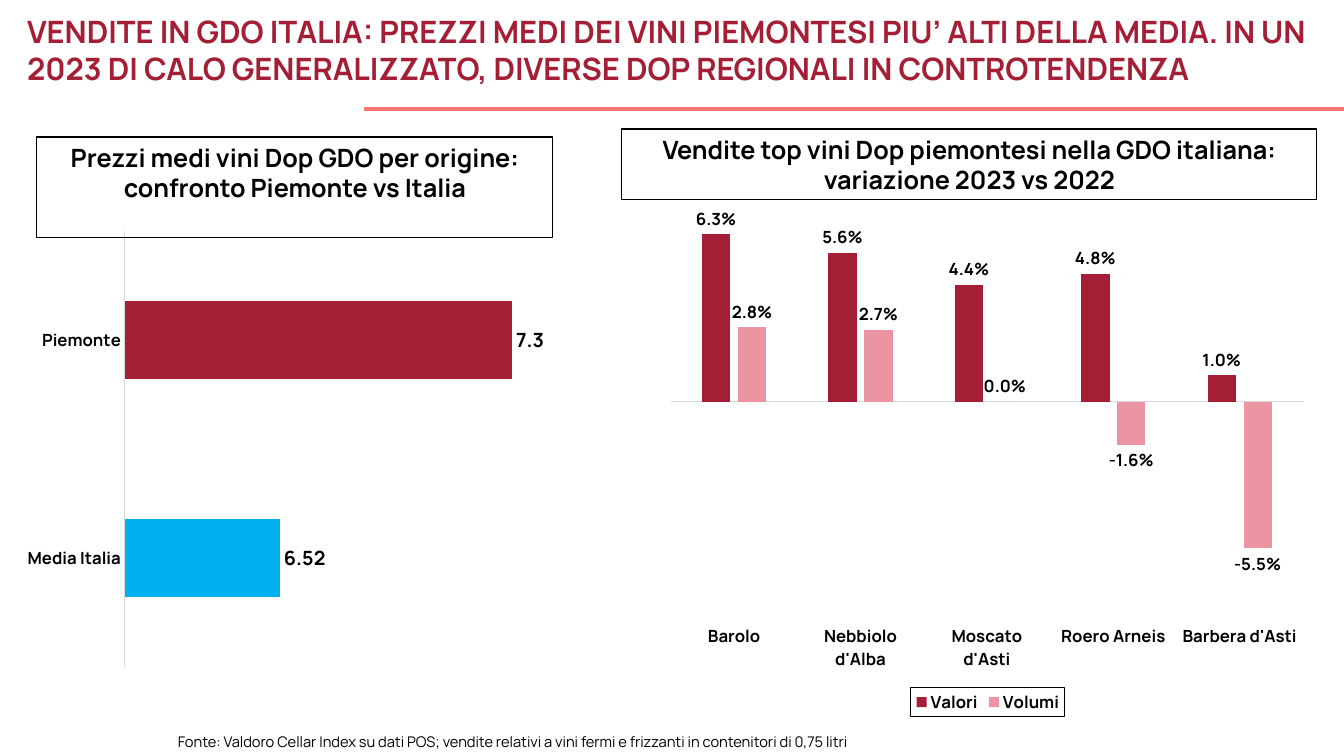
from lxml import etree
from pptx import Presentation
from pptx.chart.data import CategoryChartData
from pptx.dml.color import RGBColor
from pptx.enum.chart import (XL_CHART_TYPE, XL_LABEL_POSITION, XL_LEGEND_POSITION,
                             XL_TICK_LABEL_POSITION, XL_TICK_MARK)
from pptx.enum.shapes import MSO_CONNECTOR, MSO_SHAPE
from pptx.enum.text import MSO_ANCHOR, PP_ALIGN
from pptx.oxml import parse_xml
from pptx.oxml.ns import nsdecls, qn
from pptx.util import Emu, Pt

COLUMNS, BARS = XL_CHART_TYPE.COLUMN_CLUSTERED, XL_CHART_TYPE.BAR_CLUSTERED
LOW, NEXT_TO_AXIS = XL_TICK_LABEL_POSITION.LOW, XL_TICK_LABEL_POSITION.NEXT_TO_AXIS
OUTSIDE = XL_LABEL_POSITION.OUTSIDE_END
NO_TICK, BOTTOM = XL_TICK_MARK.NONE, XL_LEGEND_POSITION.BOTTOM
RECTANGLE, STRAIGHT = MSO_SHAPE.RECTANGLE, MSO_CONNECTOR.STRAIGHT
LEFT, CENTER, TOP = PP_ALIGN.LEFT, PP_ALIGN.CENTER, MSO_ANCHOR.TOP

WINE = RGBColor(0xA4, 0x1F, 0x35)
PINK = RGBColor(0xEB, 0x95, 0xA3)
CORAL = RGBColor(0xF8, 0x75, 0x75)
SKY = RGBColor(0x00, 0xB0, 0xF0)
GREY = RGBColor(0xD9, 0xD9, 0xD9)
BLACK = RGBColor(0, 0, 0)
FONT = "Manrope"
EMU_PER_PX = 914400 / 100.8
TITLE_ONLY = 5

SLIDE_SIZE = (1344, 756)
TITLE = ("VENDITE IN GDO ITALIA: PREZZI MEDI DEI VINI PIEMONTESI PIU’ ALTI DELLA MEDIA. "
         "IN UN 2023 DI CALO GENERALIZZATO, DIVERSE DOP REGIONALI IN CONTROTENDENZA")
TITLE_BOX = (17, 8, 1327, 121)
RULE = (364, 109, 1344, 109)
SOURCE = ("Fonte: Valdoro Cellar Index su dati POS; vendite relativi a vini fermi e "
          "frizzanti in contenitori di 0,75 litri")
SOURCE_BOX = (168, 728, 794, 27)
SALES = {
    "kind": COLUMNS, "box": (657, 177, 658, 543), "plot": (671, 189, 632, 426),
    "categories": ["Barolo", "Nebbiolo d'Alba", "Moscato d'Asti", "Roero Arneis",
                   "Barbera d'Asti"],
    "series": [("Valori", [0.063, 0.056, 0.044, 0.048, 0.01], WINE),
               ("Volumi", [0.028, 0.027, 0, -0.016, -0.055], PINK)],
    "range": (-0.08, 0.08), "gap": 219, "overlap": -27, "names_at": LOW,
    "number_format": "0.0%", "label_size": 12, "legend": (911, 691, 154, 32),
    "heading": "Vendite top vini Dop piemontesi nella GDO italiana: variazione 2023 vs 2022",
    "heading_box": (622, 129, 695, 71),
}
PRICES = {
    "kind": BARS, "box": (17, 222, 535, 455), "plot": (125, 231, 417, 436),
    "categories": ["Piemonte", "Media Italia"],
    "series": [("Prezzo medio", [7.3, 6.52], WINE)],
    "highlight": (1, SKY), "range": (6, 7.4), "gap": 182, "overlap": 0,
    "names_at": NEXT_TO_AXIS, "number_format": "General", "label_size": 14,
    "heading": "Prezzi medi vini Dop GDO per origine: confronto Piemonte vs Italia",
    "heading_box": (37, 137, 516, 101),
}


def px(lengths):
    return [Emu(round(length * EMU_PER_PX)) for length in lengths]


def set_font(font, size, color=BLACK, bold=True):
    for name, value in {"name": FONT, "size": Pt(size), "bold": bold}.items():
        setattr(font, name, value)
    font.color.rgb = color


def write(box, text, size, align=LEFT, color=BLACK, bold=True, wrap=True):
    frame = box.text_frame
    frame.word_wrap = wrap
    frame.vertical_anchor = TOP
    para = frame.paragraphs[0]
    para.alignment = align
    para.line_spacing = 1.0
    span = para.add_run()
    span.text = text
    set_font(span.font, size, color, bold)


def manual_layout(part, chart_box, inner=False):
    """Return a c:layout that places part, in slide px, within the chart."""
    left, top, width, height = chart_box
    shares = {"x": (part[0] - left) / width, "y": (part[1] - top) / height,
              "w": part[2] / width, "h": part[3] / height}
    modes = {"layoutTarget": "inner"} if inner else {}
    modes.update({"xMode": "edge", "yMode": "edge"})
    layout = etree.Element(qn("c:layout"))
    manual = etree.SubElement(layout, qn("c:manualLayout"))
    for name, value in {**modes, **shares}.items():
        etree.SubElement(manual, qn("c:" + name)).set("val", str(value))
    return layout


def drop_layout(parent):
    for old in parent.findall(qn("c:layout")):
        parent.remove(old)


def add_legend(chart, facts):
    chart.has_legend = True
    legend = chart.legend
    legend.position = BOTTOM
    legend.include_in_layout = False
    set_font(legend.font, 12)
    node = legend._element
    drop_layout(node)
    node.find(qn("c:legendPos")).addnext(manual_layout(facts["legend"], facts["box"]))
    node.find(qn("c:txPr")).addprevious(parse_xml(
        f'<c:spPr {nsdecls("c", "a")}><a:ln w="9525"><a:solidFill>'
        f'<a:srgbClr val="{BLACK}"/></a:solidFill></a:ln></c:spPr>'))


def add_bar_chart(page, facts):
    data = CategoryChartData()
    data.categories = facts["categories"]
    for name, values, _ in facts["series"]:
        data.add_series(name, values)
    chart = page.shapes.add_chart(facts["kind"], *px(facts["box"]), data).chart
    chart.has_title = False
    chart.has_legend = False
    chart.font.name, chart.font.size = "Arial", Pt(10)

    values_axis = chart.value_axis
    values_axis.minimum_scale, values_axis.maximum_scale = facts["range"]
    values_axis.has_major_gridlines = False
    values_axis.visible = False
    names_axis = chart.category_axis
    names_axis.major_tick_mark = names_axis.minor_tick_mark = NO_TICK
    names_axis.tick_label_position = facts["names_at"]
    names_axis.reverse_order = facts["kind"] == BARS
    names_axis.format.line.color.rgb = GREY
    names_axis.format.line.width = Pt(0.75)
    set_font(names_axis.tick_labels.font, 12)

    plot = chart.plots[0]
    plot.gap_width, plot.overlap = facts["gap"], facts["overlap"]
    plot.vary_by_categories = False
    for series, (_, _, color) in zip(plot.series, facts["series"]):
        series.invert_if_negative = False
        series.format.fill.solid()
        series.format.fill.fore_color.rgb = color
        labels = series.data_labels
        for name, value in {"show_value": True, "position": OUTSIDE,
                            "number_format": facts["number_format"],
                            "number_format_is_linked": False}.items():
            setattr(labels, name, value)
        set_font(labels.font, facts["label_size"])
    if "highlight" in facts:
        index, color = facts["highlight"]
        fill = plot.series[0].points[index].format.fill
        fill.solid()
        fill.fore_color.rgb = color

    area = chart._chartSpace.chart.plotArea
    drop_layout(area)
    area.insert(0, manual_layout(facts["plot"], facts["box"], inner=True))
    if "legend" in facts:
        add_legend(chart, facts)


def add_heading(page, facts):
    box = page.shapes.add_shape(RECTANGLE, *px(facts["heading_box"]))
    box.shadow.inherit = False
    box.fill.background()
    box.line.color.rgb = BLACK
    box.line.width = Pt(0)
    write(box, facts["heading"], 18, CENTER)


def main():
    deck = Presentation()
    deck.slide_width, deck.slide_height = px(SLIDE_SIZE)
    page = deck.slides.add_slide(deck.slide_layouts[TITLE_ONLY])

    title = page.shapes.title
    title.left, title.top, title.width, title.height = px(TITLE_BOX)
    write(title, TITLE, 22, color=WINE)

    rule = page.shapes.add_connector(STRAIGHT, *px(RULE))
    rule.line.color.rgb = CORAL
    rule.line.width = Pt(3)
    etree.SubElement(rule._element.spPr, qn("a:effectLst"))

    source = page.shapes.add_textbox(*px(SOURCE_BOX))
    write(source, SOURCE, 10.5, bold=False, wrap=False)

    for facts in (SALES, PRICES):
        add_bar_chart(page, facts)
        add_heading(page, facts)
    deck.save("out.pptx")


if __name__ == "__main__":
    main()
